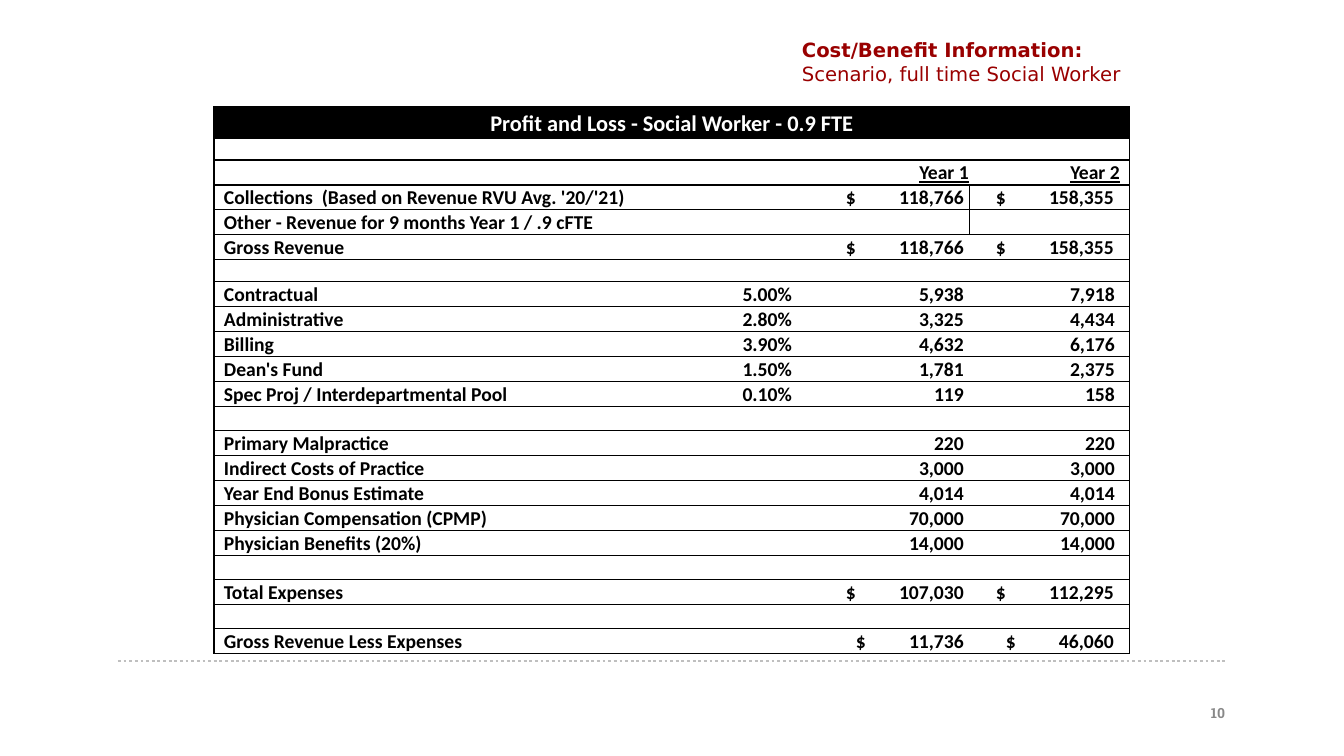
from lxml.etree import SubElement
from pptx import Presentation
from pptx.dml.color import RGBColor
from pptx.enum.dml import MSO_LINE
from pptx.enum.shapes import MSO_CONNECTOR
from pptx.enum.text import MSO_ANCHOR, PP_ALIGN
from pptx.oxml.ns import qn
from pptx.util import Emu, Pt

THEME = {
    "heading": ("DejaVu Sans", 14, "990000"),
    "banner": ("Calibri", 16, "FFFFFF"),
    "body": ("Calibri", 14, "000000"),
    "page": ("Roboto Slab", 10, "888888"),
    "rule": "BFBFBF",
    "border": "000000",
    "banner_fill": "000000",
    "cell_fill": "FFFFFF",
    "blank_size": 10,
}
PX = 914400 / 100.8
NO_STYLE = "{2D5ABB26-0587-4C30-8999-92F81FD0307C}"


def px(length):
    return Emu(round(length * PX))


def style(run, role, bold=True):
    name, size, color = THEME[role]
    run.font.name = name
    run.font.size = Pt(size)
    run.font.bold = bold
    run.font.color.rgb = RGBColor.from_string(color)


prs = Presentation()
prs.slide_width, prs.slide_height = px(1344), px(756)
slide = prs.slides.add_slide(prs.slide_layouts[6])

# Dotted footer rule
footer_rule = slide.shapes.add_connector(
    MSO_CONNECTOR.STRAIGHT, px(118), px(661), px(1227), px(661))
footer_rule.line.color.rgb = RGBColor.from_string(THEME["rule"])
footer_rule.line.width = Pt(2)
footer_rule.line.dash_style = MSO_LINE.ROUND_DOT
SubElement(footer_rule._element.spPr, qn("a:effectLst"))

# Heading
heading = slide.shapes.add_textbox(px(792), px(33), px(504), px(51)).text_frame
heading.word_wrap = True
heading.text = "Cost/Benefit Information:\vScenario, full time Social Worker"
topic, scenario = heading.paragraphs[0].runs
style(topic, "heading")
style(scenario, "heading", bold=False)

# Statement lines: label, rate, year 1, year 2
BLANK = ("", "", "", "")
statement = [
    ("Profit and Loss - Social Worker - 0.9 FTE", "", "", ""),
    BLANK,
    ("", "", "Year 1", "Year 2"),
    ("Collections  (Based on Revenue RVU Avg. '20/'21)", "", "$\t118,766", "$\t158,355"),
    ("Other - Revenue for 9 months Year 1 / .9 cFTE", "", "", ""),
    ("Gross Revenue", "", "$\t118,766", "$\t158,355"),
    BLANK,
    ("Contractual", "5.00%", "5,938", "7,918"),
    ("Administrative", "2.80%", "3,325", "4,434"),
    ("Billing", "3.90%", "4,632", "6,176"),
    ("Dean's Fund", "1.50%", "1,781", "2,375"),
    ("Spec Proj / Interdepartmental Pool", "0.10%", "119", "158"),
    BLANK,
    ("Primary Malpractice", "", "220", "220"),
    ("Indirect Costs of Practice", "", "3,000", "3,000"),
    ("Year End Bonus Estimate", "", "4,014", "4,014"),
    ("Physician Compensation (CPMP)", "", "70,000", "70,000"),
    ("Physician Benefits (20%)", "", "14,000", "14,000"),
    BLANK,
    ("Total Expenses", "", "$\t107,030", "$\t112,295"),
    BLANK,
    ("Gross Revenue Less Expenses", "", "$\t11,736", "$\t46,060"),
]
BANNER, YEARS, REVENUE, NET = 0, 2, (3, 4), len(statement) - 1
LABEL, RATE, GAP, YEAR_1, YEAR_2 = range(5)
column_widths = [375, 204, 17, 160, 160]
row_heights = [25 if any(line) else 24 for line in statement]
row_heights[BANNER] = 31
row_heights[1] = row_heights[6] = 22

frame = slide.shapes.add_table(len(statement), len(column_widths), px(214), px(107),
                               px(sum(column_widths)), px(sum(row_heights)))
table = frame.table
table.first_row = table.horz_banding = False
table._tbl.tblPr.find(qn("a:tableStyleId")).text = NO_STYLE
for column, width in zip(table.columns, column_widths):
    column.width = px(width)
for row, height in zip(table.rows, row_heights):
    row.height = px(height)

for r, (label, rate, year_1, year_2) in enumerate(statement):
    for c, text in enumerate((label, rate, "", year_1, year_2)):
        cell = table.cell(r, c)
        cell.vertical_anchor = MSO_ANCHOR.BOTTOM
        cell.margin_left = px(10 if c == LABEL and r != BANNER else 1)
        cell.margin_right = px(10 if c == YEAR_2 else 1)
        cell.margin_top, cell.margin_bottom = px(1), 0

        # Horizontal rules everywhere, vertical ones at the edges and beside revenue
        sides = ["lnT", "lnB"]
        if c == YEAR_2 or (c == YEAR_1 and r in REVENUE) or r == BANNER:
            sides.insert(0, "lnR")
        if c == LABEL or (c == YEAR_2 and r in REVENUE):
            sides.insert(0, "lnL")
        for side in sides:
            border = SubElement(cell._tc.get_or_add_tcPr(), qn(f"a:{side}"), w=str(Pt(1)))
            SubElement(SubElement(border, qn("a:solidFill")), qn("a:srgbClr"),
                       val=THEME["border"])
        cell.fill.solid()
        cell.fill.fore_color.rgb = RGBColor.from_string(
            THEME["banner_fill" if r == BANNER else "cell_fill"])

        paragraph = cell.text_frame.paragraphs[0]
        if not text:
            SubElement(paragraph._p, qn("a:endParaRPr"), sz=str(THEME["blank_size"] * 100))
            continue
        paragraph.text = text
        style(paragraph.runs[0], "banner" if r == BANNER else "body")
        paragraph.runs[0].font.underline = r == YEARS
        if r == BANNER:
            paragraph.alignment = PP_ALIGN.CENTER
        elif c != LABEL:
            paragraph.alignment = PP_ALIGN.RIGHT

        # Amounts sit slightly left of the year; dollar signs keep their own edge
        if c >= YEAR_1 and r != YEARS:
            cell.margin_right = px(15 if c == YEAR_2 else 6)
        if text.startswith("$"):
            shift = 10 if r == NET else 0
            cell.margin_left = px((26 if c == YEAR_2 else 36) + shift)
            cell.margin_right = 0
            paragraph.alignment = PP_ALIGN.LEFT
            tabs = SubElement(paragraph._p.get_or_add_pPr(), qn("a:tabLst"))
            SubElement(tabs, qn("a:tab"), pos=str(px(118 - shift)), algn="r")

table.cell(BANNER, LABEL).merge(table.cell(BANNER, YEAR_2))
for r in REVENUE:
    table.cell(r, LABEL).merge(table.cell(r, RATE))

# Page number
page = slide.shapes.add_textbox(px(1170), px(700), px(65), px(33)).text_frame
page.word_wrap = True
page.text = "10"
page.paragraphs[0].alignment = PP_ALIGN.RIGHT
style(page.paragraphs[0].runs[0], "page")

prs.save("out.pptx")
